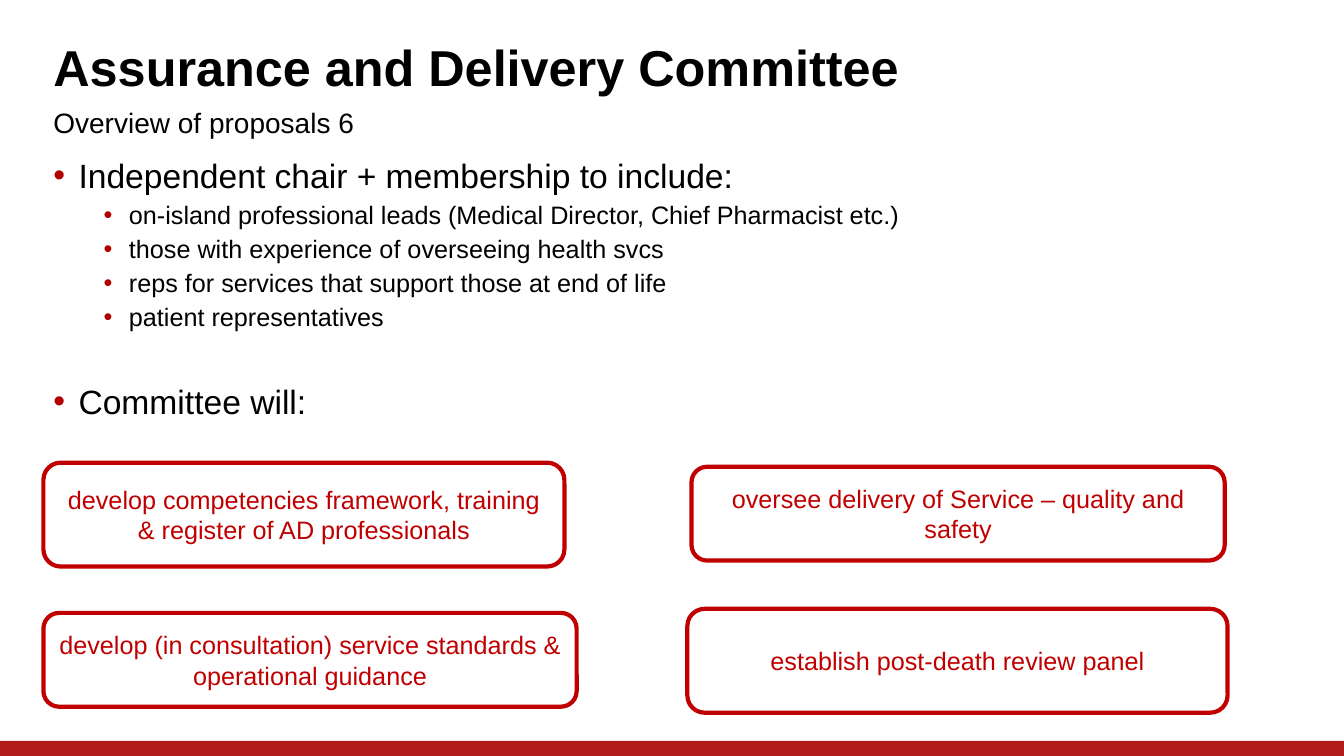
from lxml.etree import SubElement
from pptx import Presentation
from pptx.dml.color import RGBColor
from pptx.enum.shapes import MSO_SHAPE as Shape
from pptx.enum.text import MSO_ANCHOR as Anchor, PP_ALIGN as Align
from pptx.oxml.ns import qn
from pptx.util import Pt

FONT = "Arial"
BLACK, BULLET_RED, BOX_RED, BAR_RED = "000000", "B20000", "C00000", "B21C1A"
WIDTH, HEIGHT, BAR_HEIGHT = 960, 540, 10.8
LEFT, HEADING_WIDTH = 31, 863.3

TITLE = "Assurance and Delivery Committee"
SUBTITLE = "Overview of proposals 6"
# text, level, space before
BULLETS = [
    ("Independent chair + membership to include:", 0, 0),
    ("on-island professional leads (Medical Director, Chief Pharmacist etc.)", 1, 5),
    ("those with experience of overseeing health svcs", 1, 5),
    ("reps for services that support those at end of life", 1, 5),
    ("patient representatives", 1, 5),
    ("Committee will:", 0, 37.8),
]
LEVELS = [(24, 18), (18, 54)]  # font size, left indent
HANGING = 18
# text, left, top, width, height
DUTIES = [
    ("develop (in consultation) service standards & operational guidance",
     LEFT, 437.8, 380.9, 67),
    ("develop competencies framework, training & register of AD professionals",
     LEFT, 330.5, 372.2, 74.2),
    ("establish post-death review panel", 491, 434.9, 385.9, 74.2),
    ("oversee delivery of Service – quality and safety", 493.9, 333.4, 380.9, 67),
]


def color(hex_code):
    return RGBColor.from_string(hex_code)


def add_run(paragraph, text, size, hex_code, bold=False):
    run = paragraph.add_run()
    run.text = text
    run.font.name = FONT
    run.font.size = Pt(size)
    run.font.bold = bold
    run.font.color.rgb = color(hex_code)


def add_text_box(slide, left, top, width, height, anchor):
    box = slide.shapes.add_textbox(Pt(left), Pt(top), Pt(width), Pt(height))
    frame = box.text_frame
    frame.word_wrap = True
    frame.vertical_anchor = anchor
    return frame


def add_heading(slide, text, top, height, size, bold=False):
    frame = add_text_box(slide, LEFT, top, HEADING_WIDTH, height, Anchor.MIDDLE)
    paragraph = frame.paragraphs[0]
    paragraph.line_spacing = 0.9
    add_run(paragraph, text, size, BLACK, bold)


def set_bullet(paragraph, indent):
    properties = paragraph._p.get_or_add_pPr()
    properties.set("marL", str(Pt(indent)))
    properties.set("indent", str(-Pt(HANGING)))
    bullet_color = SubElement(properties, qn("a:buClr"))
    SubElement(bullet_color, qn("a:srgbClr"), val=BULLET_RED)
    SubElement(properties, qn("a:buFont"), typeface=FONT)
    SubElement(properties, qn("a:buChar"), char="•")


def add_bullets(slide):
    frame = add_text_box(slide, LEFT, 110.2, 906.5, 409, Anchor.TOP)
    for index, (text, level, space_before) in enumerate(BULLETS):
        paragraph = frame.add_paragraph() if index else frame.paragraphs[0]
        size, indent = LEVELS[level]
        paragraph.level = level
        set_bullet(paragraph, indent)
        paragraph.line_spacing = 0.9
        paragraph.space_before = Pt(space_before)
        add_run(paragraph, text, size, BLACK)


def add_shape(slide, kind, left, top, width, height):
    shape = slide.shapes.add_shape(kind, Pt(left), Pt(top), Pt(width), Pt(height))
    shape.shadow.inherit = False
    return shape


def add_duty(slide, text, *place):
    shape = add_shape(slide, Shape.ROUNDED_RECTANGLE, *place)
    shape.fill.background()
    shape.line.color.rgb = color(BOX_RED)
    shape.line.width = Pt(3)
    frame = shape.text_frame
    frame.word_wrap = True
    frame.vertical_anchor = Anchor.MIDDLE
    paragraph = frame.paragraphs[0]
    paragraph.alignment = Align.CENTER
    add_run(paragraph, text, 18, BOX_RED)


def main():
    presentation = Presentation()
    presentation.slide_width, presentation.slide_height = Pt(WIDTH), Pt(HEIGHT)
    slide = presentation.slides.add_slide(presentation.slide_layouts[6])

    bar = add_shape(slide, Shape.RECTANGLE, 0, HEIGHT - BAR_HEIGHT, WIDTH, BAR_HEIGHT)
    bar.fill.solid()
    bar.fill.fore_color.rgb = color(BAR_RED)
    bar.line.fill.background()

    add_heading(slide, TITLE, 28.8, 42.5, 36, bold=True)
    add_heading(slide, SUBTITLE, 77.8, 22.3, 20)
    add_bullets(slide)
    for duty in DUTIES:
        add_duty(slide, *duty)
    presentation.save("out.pptx")


if __name__ == "__main__":
    main()
